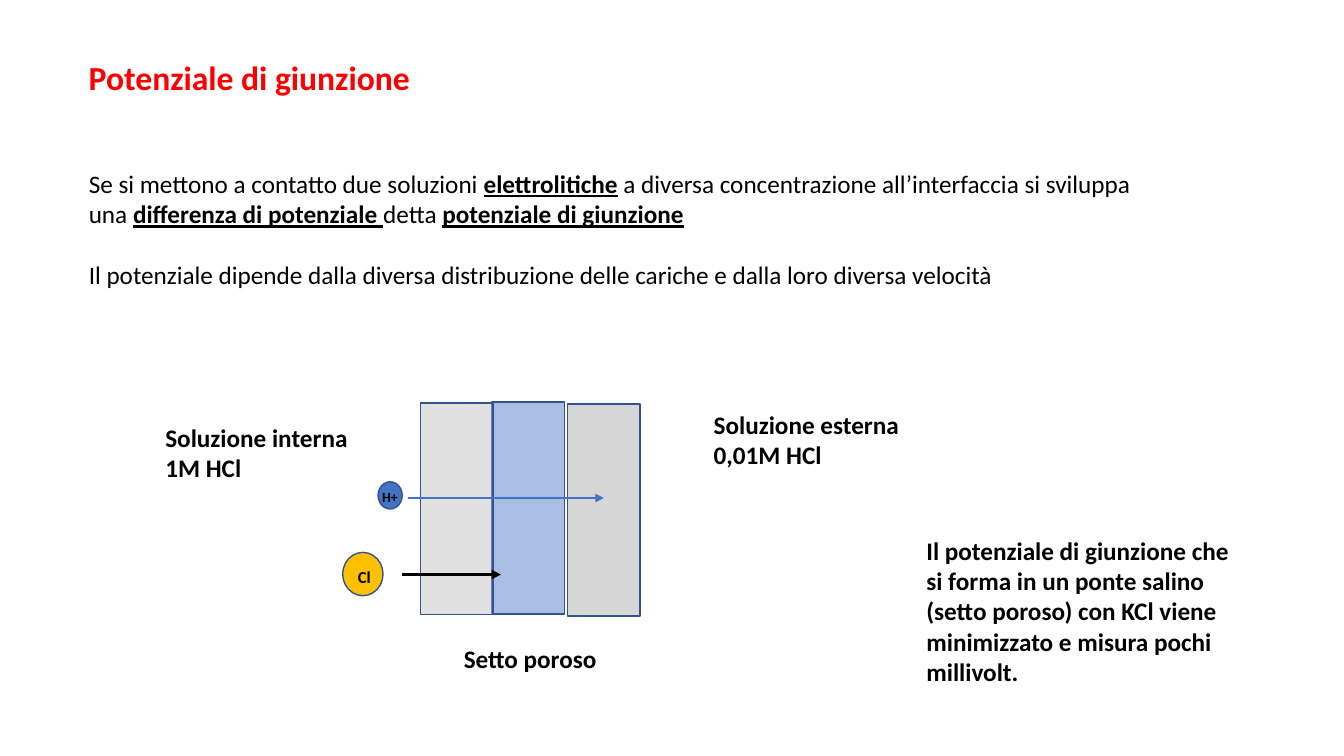
from lxml.etree import SubElement
from pptx import Presentation
from pptx.dml.color import RGBColor
from pptx.enum.shapes import MSO_CONNECTOR, MSO_SHAPE
from pptx.enum.text import MSO_AUTO_SIZE
from pptx.oxml.ns import qn
from pptx.util import Inches, Pt

deck = Presentation()
deck.slide_width, deck.slide_height = Inches(13.33), Inches(7.5)
page = deck.slides.add_slide(deck.slide_layouts[6])

BLACK, RED, BLUE, NAVY = "000000", "FF0000", "4472C4", "32538F"
INSET = Inches(0.05)


def paint(fill, color, opacity=100):
    """Fill an area, line or font with a colour, opacity in percent."""
    fill.solid()
    fill.fore_color.rgb = RGBColor.from_string(color)
    if opacity < 100:
        for tint in fill._xPr.iter(qn("a:srgbClr")):
            SubElement(tint, qn("a:alpha"), val=str(opacity * 1000))


def place(*shares):
    """Turn percentages of the slide's width and height, in turn, into lengths."""
    sides = (deck.slide_width, deck.slide_height) * 2
    return [round(side * share / 100) for side, share in zip(sides, shares)]


# Porous septum: the middle layer lies behind the outer two
LAYER_WIDTH, LAYER_HEIGHT = 5.4, 28
layers = [
    (36.6, 53.2, BLUE),
    (31.28, 53.33, "BFBFBF"),
    (42.23, 53.47, "A6A6A6"),
]
# Ions: hydrogen and chloride
ions = [
    ((28.13, 63.73, 1.8, 3.6), BLUE),
    ((25.5, 73.07, 3, 5.73), "FFC000"),
]
shapes = [(MSO_SHAPE.RECTANGLE, (left, top, LAYER_WIDTH, LAYER_HEIGHT), color, 46)
          for left, top, color in layers]
shapes += [(MSO_SHAPE.OVAL, area, color, 100) for area, color in ions]
for kind, area, color, opacity in shapes:
    shape = page.shapes.add_shape(kind, *place(*area))
    shape.shadow.inherit = False
    paint(shape.fill, color, opacity)
    paint(shape.line.fill, NAVY)
    shape.line.width = Pt(1)

# Texts: area, wrap, size, colour, bold, paragraphs
labels = [
    ((6.23, 6.93, 24.75, 5.73), False, 24, RED, ["Potenziale di giunzione"]),
    ((34.13, 84.4, 11.18, 4.8), False, 18, BLACK, ["Setto poroso"]),
    ((11.93, 55.2, 14.4, 9.07), False, 18, BLACK, ["Soluzione interna", "1M HCl"]),
    ((52.73, 53.47, 15.08, 9.07), False, 18, BLACK, ["Soluzione esterna", "0,01M HCl"]),
    ((26.25, 74.27, 1.8, 3.6), False, 12, BLACK, ["Cl"]),
    ((28.05, 64, 2.03, 3.33), False, 10, BLACK, ["H+"]),
    ((68.55, 70.13, 23.4, 21.87), True, 18, BLACK, [
        "Il potenziale di giunzione che si forma in un ponte salino (setto poroso) "
        "con KCl viene minimizzato e misura pochi millivolt."]),
]
# In the body text, every second span is a bold, underlined key term
body = [
    ["Se si mettono a contatto due soluzioni ", "elettrolitiche",
     " a diversa concentrazione all’interfaccia si sviluppa una ",
     "differenza di potenziale ", "detta ", "potenziale di giunzione"],
    ["Il potenziale dipende dalla diversa distribuzione delle cariche "
     "e dalla loro diversa velocità"],
]
texts = [(area, wrap, size, color, True, [[line] for line in lines])
         for area, wrap, size, color, lines in labels]
texts.append(((6.23, 21.6, 78.52, 26.13), True, 18, BLACK, False, body))

for area, wrap, size, color, bold, paragraphs in texts:
    box = page.shapes.add_textbox(*place(*area))
    frame = box.text_frame
    frame.word_wrap = wrap
    frame.auto_size = MSO_AUTO_SIZE.SHAPE_TO_FIT_TEXT
    frame.margin_left = frame.margin_right = INSET
    frame.margin_top = frame.margin_bottom = INSET
    for row, spans in enumerate(paragraphs):
        para = frame.add_paragraph() if row else frame.paragraphs[0]
        para.font.name, para.font.size, para.font.bold = "Calibri", Pt(size), bold
        paint(para.font.fill, color)
        if row and paragraphs is body:
            para.space_before = Pt(22)
        for index, words in enumerate(spans):
            span = para.add_run()
            span.text = words
            if index % 2:
                span.font.bold = span.font.underline = True

# Arrows: how far each ion travels
for start, end, height, color, weight in [
    (30.38, 44.93, 65.87, BLUE, 2),
    (29.93, 37.28, 76, BLACK, 2.25),
]:
    arrow = page.shapes.add_connector(
        MSO_CONNECTOR.STRAIGHT, *place(start, height, end, height))
    paint(arrow.line.fill, color)
    arrow.line.width = Pt(weight)
    properties = arrow._element.spPr
    SubElement(properties.find(qn("a:ln")), qn("a:tailEnd"), type="triangle")
    SubElement(properties, qn("a:effectLst"))

deck.save("out.pptx")
